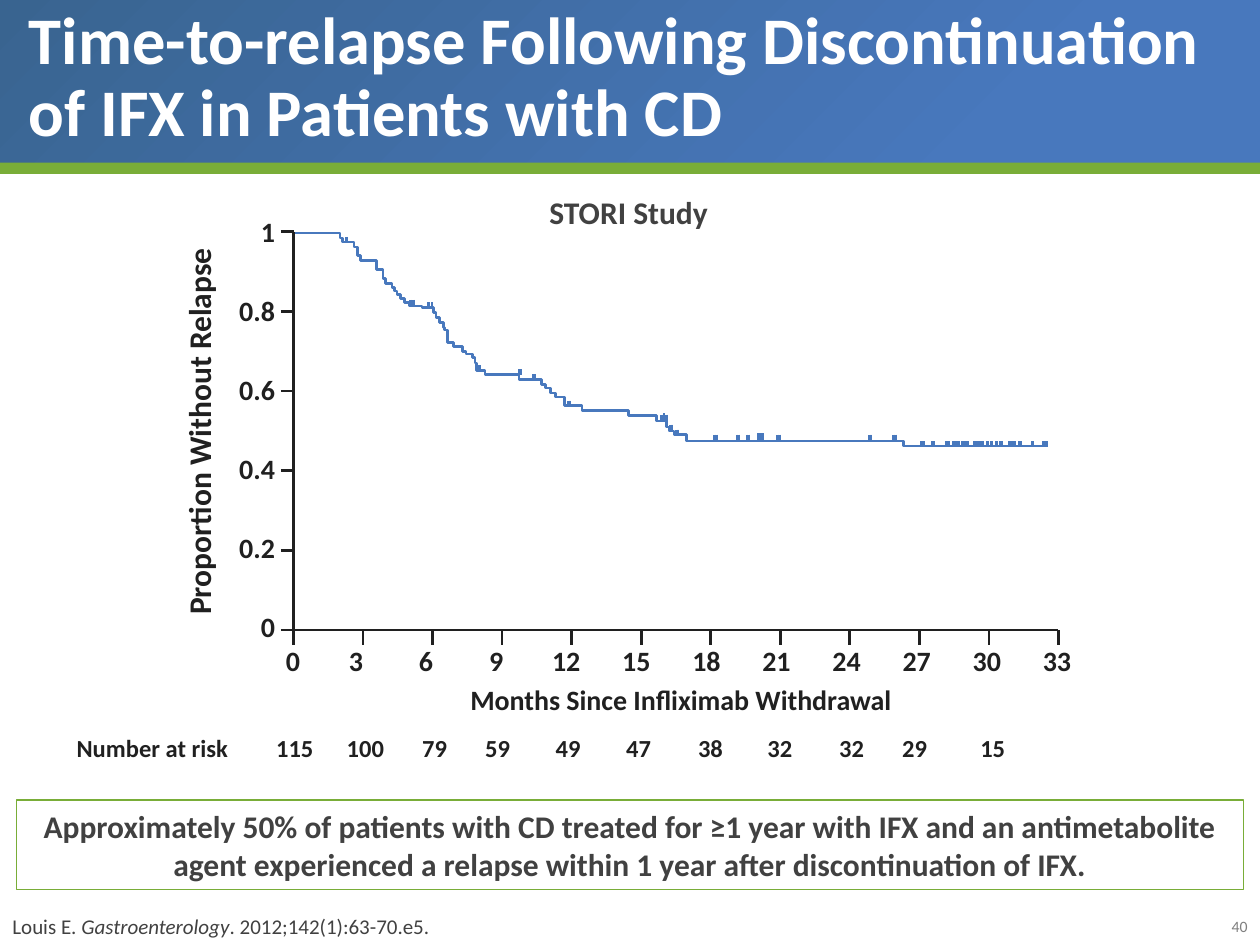
import collections

import lxml.etree
import pptx
import pptx.dml.color
import pptx.enum.shapes
import pptx.enum.text
import pptx.oxml.ns
import pptx.util

Inches = pptx.util.Inches
Pt = pptx.util.Pt
RGBColor = pptx.dml.color.RGBColor
ALIGN = pptx.enum.text.PP_ALIGN
ANCHOR = pptx.enum.text.MSO_ANCHOR
RECTANGLE = pptx.enum.shapes.MSO_SHAPE.RECTANGLE
qualified = pptx.oxml.ns.qn

WHITE = RGBColor(0xFF, 0xFF, 0xFF)
DARK_BLUE = RGBColor(0x39, 0x64, 0x90)
BLUE = RGBColor(0x48, 0x78, 0xBD)
GREEN = RGBColor(0x79, 0xAD, 0x38)
GRAY = RGBColor(0x7F, 0x7F, 0x7F)
TEXT = RGBColor(0x41, 0x41, 0x41)
INK = RGBColor(0x20, 0x20, 0x20)

Box = collections.namedtuple("Box", "left top width height")

MONTHS = range(0, 34, 3)
PROPORTIONS = ["1", "0.8", "0.6", "0.4", "0.2", "0"]
RISK_COUNTS = [115, 100, 79, 59, 49, 47, 38, 32, 32, 29, 15]
RISK_TABS = [1.88, 2.44, 2.94, 3.44, 4, 4.56, 5.13, 5.68, 6.25, 6.75, 7.37]

EARLY_DROPS = [
    (0.37, 0.05), (0.39, 0.08), (0.48, 0.12), (0.51, 0.19), (0.53, 0.23),
    (0.66, 0.30), (0.71, 0.37), (0.73, 0.41), (0.78, 0.44), (0.80, 0.47),
    (0.82, 0.50), (0.85, 0.53), (0.88, 0.56), (0.92, 0.59), (1.02, 0.60),
    (1.11, 0.64), (1.13, 0.68), (1.16, 0.72), (1.19, 0.76), (1.20, 0.78),
    (1.22, 0.88), (1.27, 0.91), (1.34, 0.95), (1.37, 0.97), (1.42, 1.00),
    (1.44, 1.04), (1.45, 1.10), (1.52, 1.13), (1.79, 1.17), (1.97, 1.21),
    (2.00, 1.24), (2.04, 1.28), (2.08, 1.31), (2.15, 1.38), (2.29, 1.42),
    (2.66, 1.46), (2.88, 1.50),
]
LATE_DROPS = [(2.96, 1.55), (2.98, 1.58), (3.02, 1.61), (3.12, 1.66), (4.84, 1.70)]

CENSOR_HEIGHT = 0.05
CENSOR_MARKS = {
    0.04: [0.42],
    0.54: [0.93, 0.95],
    0.56: [1.07, 1.10],
    1.06: [1.47, 1.48],
    1.09: [1.79, 1.80],
    1.13: [1.90, 1.91],
    1.34: [2.18, 2.19],
    1.44: [2.94],
    1.45: [2.92, 2.93, 2.96],
    1.53: [2.99, 3.00],
    1.57: [3.04, 3.05],
    1.60: [3.69, 3.71, 3.72],
    1.61: [3.34, 3.36, 3.52, 3.53, 3.60, 3.61, 3.84, 3.86, 4.57, 4.58, 4.76, 4.78],
    1.66: [4.98, 5.00, 5.07, 5.08, 5.18, 5.20, 5.24, 5.26, 5.28, 5.31, 5.33,
           5.35, 5.40, 5.42, 5.43, 5.45, 5.47, 5.51, 5.54, 5.58, 5.61, 5.62,
           5.68, 5.70, 5.72, 5.76, 5.77, 5.86, 5.87, 5.95, 5.96, 5.98],
}


def to_inches(box):
    return [Inches(length) for length in box]


def style(paragraph, size, color, bold=True, align=ALIGN.LEFT):
    paragraph.alignment = align
    paragraph.font.name = "Calibri"
    paragraph.font.size = Pt(size)
    paragraph.font.bold = bold
    paragraph.font.color.rgb = color


def add_text(slide, box, lines, size, color, bold=True, align=ALIGN.LEFT, wrap=True, space_after=0):
    shape = slide.shapes.add_textbox(*to_inches(box))
    frame = shape.text_frame
    frame.word_wrap = wrap
    frame.text = "\n".join(lines)
    for paragraph in frame.paragraphs:
        style(paragraph, size, color, bold, align)
        paragraph.space_after = Pt(space_after)
    return shape


def set_tabs(paragraph, positions, align):
    default_font = paragraph._p.pPr.find(qualified("a:defRPr"))
    tabs = lxml.etree.Element(qualified("a:tabLst"))
    for position in positions:
        lxml.etree.SubElement(tabs, qualified("a:tab"), pos=str(Inches(position)), algn=align)
    default_font.addprevious(tabs)


def add_bar(slide, box):
    shape = slide.shapes.add_shape(RECTANGLE, *to_inches(box))
    shape.shadow.inherit = False
    shape.line.fill.background()
    return shape


def add_line(slide, start, end, color):
    line = slide.shapes.add_connector(
        pptx.enum.shapes.MSO_CONNECTOR.STRAIGHT, *to_inches(start + end))
    line.line.color.rgb = color
    line.line.width = Pt(1.5)
    lxml.etree.SubElement(line._element.spPr, qualified("a:effectLst"))


def add_step_curve(slide, plot, start, drops, end):
    points = []
    level = start[1]
    for across, next_level in drops:
        points += [(across, level), (across, next_level)]
        level = next_level
    points.append((end, level))
    placed = [(Inches(plot.left + x), Inches(plot.top + y)) for x, y in [start] + points]
    builder = slide.shapes.build_freeform(*placed[0])
    builder.add_line_segments(placed[1:], close=False)
    curve = builder.convert_to_shape()
    curve.shadow.inherit = False
    curve.fill.background()
    curve.line.color.rgb = BLUE
    curve.line.width = Pt(1.5)


def add_header(slide, box):
    band = add_bar(slide, box)
    band.fill.gradient()
    for stop, position, color in zip(band.fill.gradient_stops, (0, 0.79), (DARK_BLUE, BLUE)):
        stop.position = position
        stop.color.rgb = color
    gradient = band._element.spPr.find(qualified("a:gradFill"))
    gradient.remove(gradient.find(qualified("a:lin")))
    circle = lxml.etree.SubElement(gradient, qualified("a:path"), path="circle")
    lxml.etree.SubElement(circle, qualified("a:fillToRect"), r="100000", b="100000")

    stripe = add_bar(slide, Box(box.left, box.top + box.height - 0.08, box.width, 0.09))
    stripe.fill.solid()
    stripe.fill.fore_color.rgb = GREEN

    title = slide.shapes.title
    title.left, title.top, title.width, title.height = to_inches(
        Box(box.left + 0.13, box.top + 0.11, box.width - 0.26, 1.14))
    frame = title.text_frame
    frame.text = "Time-to-relapse Following Discontinuation of IFX in Patients with CD"
    frame.word_wrap = True
    frame.auto_size = pptx.enum.text.MSO_AUTO_SIZE.NONE
    frame.vertical_anchor = ANCHOR.BOTTOM
    style(frame.paragraphs[0], 38, WHITE)
    frame.paragraphs[0].line_spacing = 0.9
    stripe._element.addnext(title._element)


def add_survival_plot(slide, plot):
    left, top, width, height = plot
    bottom = top + height
    add_text(slide, Box(left + 1.53, top - 0.36, 2.26, 0.4), ["STORI Study"], 18, TEXT,
             align=ALIGN.CENTER)
    axis_title = add_text(slide, Box(left - 2.3, top + 1.4, 3.13, 0.37),
                          ["Proportion Without Relapse"], 18, INK,
                          align=ALIGN.CENTER, wrap=False)
    axis_title.rotation = 270
    axis_title.text_frame.vertical_anchor = ANCHOR.BOTTOM
    axis_title.text_frame.paragraphs[0].line_spacing = 0.9

    month_labels = add_text(slide, Box(left - 0.16, bottom + 0.06, 6.47, 0.68),
                            ["\t".join(map(str, MONTHS)), "Months Since Infliximab Withdrawal"],
                            16, INK, space_after=3)
    label_line, month_title = month_labels.text_frame.paragraphs
    label_step = 6.12 / (len(MONTHS) - 1)
    set_tabs(label_line, [label_step * index for index in range(1, len(MONTHS))], "ctr")
    month_title.alignment = ALIGN.CENTER
    add_text(slide, Box(left - 0.54, top - 0.19, 0.49, 3.54), PROPORTIONS, 16, INK,
             align=ALIGN.RIGHT, space_after=26)

    add_step_curve(slide, plot, (0, 0.01), EARLY_DROPS, 2.95)
    add_step_curve(slide, plot, (2.96, 1.50), LATE_DROPS, 5.98)
    for offset, positions in CENSOR_MARKS.items():
        mark_top = top + offset
        for position in positions:
            across = left + position
            add_line(slide, (across, mark_top), (across, mark_top + CENSOR_HEIGHT), BLUE)

    add_line(slide, (left, top), (left, bottom), INK)
    add_line(slide, (left, bottom), (left + width, bottom), INK)
    for index in range(len(PROPORTIONS)):
        down = top + height * index / (len(PROPORTIONS) - 1)
        add_line(slide, (left - 0.1, down), (left, down), INK)
    for index in range(len(MONTHS)):
        across = left + width * index / (len(MONTHS) - 1)
        add_line(slide, (across, bottom), (across, bottom + 0.12), INK)


def add_risk_row(slide, box):
    row = add_text(slide, box, ["\t".join(["Number at risk", *map(str, RISK_COUNTS)])], 14, INK)
    set_tabs(row.text_frame.paragraphs[0], RISK_TABS, "r")


def add_callout(slide, box):
    callout = add_bar(slide, box)
    callout.fill.background()
    callout.line.color.rgb = GREEN
    callout.line.width = Pt(0.75)
    frame = callout.text_frame
    frame.word_wrap = True
    frame.text = ("Approximately 50% of patients with CD treated for ≥1 year with IFX and an "
                  "antimetabolite agent experienced a relapse within 1 year after "
                  "discontinuation of IFX.")
    style(frame.paragraphs[0], 18, TEXT, align=ALIGN.CENTER)


def add_footer(slide, box):
    citation = add_text(slide, Box(box.left, box.top, 6.95, box.height), [""], 12, TEXT, bold=False)
    paragraph = citation.text_frame.paragraphs[0]
    for words, italic in [("Louis E. ", False), ("Gastroenterology", True),
                          (". 2012;142(1):63-70.e5.", False)]:
        run = paragraph.add_run()
        run.text = words
        run.font.italic = italic
    add_text(slide, Box(box.left + box.width - 0.42, box.top + 0.03, 0.42, 0.25), ["40"], 9, GRAY,
             bold=False, align=ALIGN.RIGHT)


def main():
    presentation = pptx.Presentation()
    presentation.slide_width = Inches(10)
    presentation.slide_height = Inches(7.5)
    slide = presentation.slides.add_slide(presentation.slide_layouts[5])
    add_header(slide, Box(0, 0, 10, 1.37))
    add_survival_plot(slide, Box(2.33, 1.84, 6.07, 3.16))
    add_risk_row(slide, Box(0.51, 5.77, 7.74, 0.34))
    add_callout(slide, Box(0.13, 6.35, 9.74, 0.71))
    add_footer(slide, Box(0, 7.2, 10, 0.3))
    presentation.save("out.pptx")


if __name__ == "__main__":
    main()
